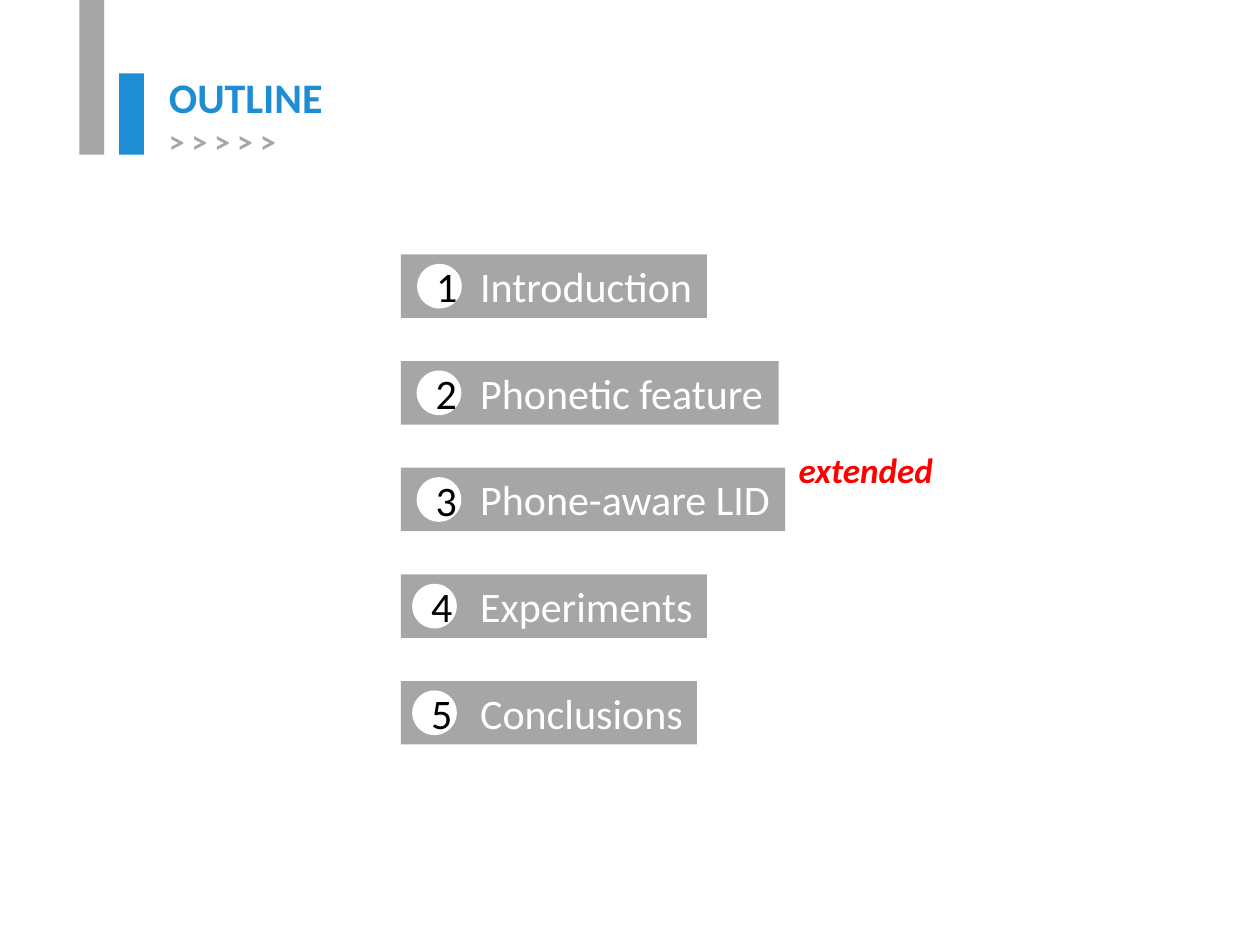
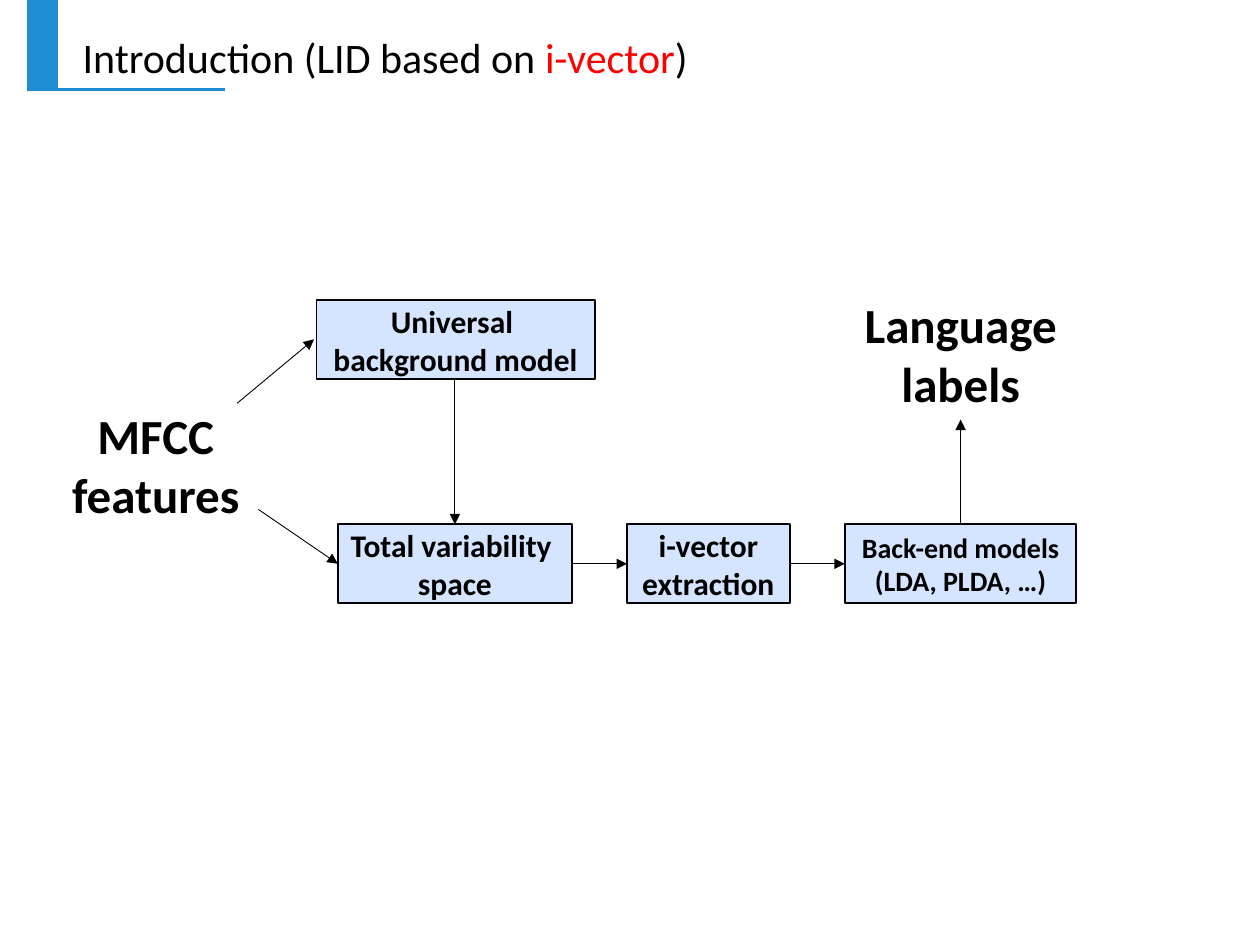
from pptx import Presentation
from pptx.dml.color import RGBColor
from pptx.enum import shapes, text
from pptx.oxml import ns, xmlchemy
from pptx.util import Cm, Pt

BLUE = RGBColor(0x1E, 0x8D, 0xD4)
GRAY = RGBColor(0xA6, 0xA6, 0xA6)
PALE = RGBColor(0xD5, 0xE5, 0xFF)
RED = RGBColor(0xFF, 0, 0)
BLACK = RGBColor(0, 0, 0)
WHITE = RGBColor(0xFF, 0xFF, 0xFF)
FONT = "Calibri"
RECT = shapes.MSO_SHAPE.RECTANGLE
OVAL = shapes.MSO_SHAPE.OVAL
LEFT, MID = text.PP_ALIGN.LEFT, text.PP_ALIGN.CENTER
TOP, CENTER = text.MSO_ANCHOR.TOP, text.MSO_ANCHOR.MIDDLE


def style(part, size, color, bold=False, italic=False):
    for run in part.runs:
        font = run.font
        font.name, font.size = FONT, Pt(size)
        font.bold, font.italic = bold, italic
        font.color.rgb = color


def write(shape, words, size, color, align=LEFT, anchor=TOP, wrap=True, **look):
    frame = shape.text_frame
    frame.text = words
    frame.word_wrap = wrap
    frame.auto_size = text.MSO_AUTO_SIZE.NONE
    frame.vertical_anchor = anchor
    for part in frame.paragraphs:
        part.alignment = align
        style(part, size, color, **look)
    return frame


def block(slide, box, fill, kind=RECT, line=None, width=1):
    shape = slide.shapes.add_shape(kind, *map(Cm, box))
    shape.shadow.inherit = False
    shape.fill.solid()
    shape.fill.fore_color.rgb = fill
    if line is None:
        shape.line.fill.background()
    else:
        shape.line.color.rgb = line
        shape.line.width = Pt(width)
    return shape


def label(slide, box, words, size, color, **look):
    shape = slide.shapes.add_textbox(*map(Cm, box))
    write(shape, words, size, color, wrap=False, **look)


def link(slide, start, end, color=BLACK, width=0.5, arrow=True):
    line = slide.shapes.add_connector(
        shapes.MSO_CONNECTOR.STRAIGHT, *map(Cm, start + end))
    line.line.color.rgb = color
    line.line.width = Pt(width)
    if arrow:
        tip = xmlchemy.OxmlElement("a:tailEnd")
        tip.set("type", "triangle")
        line.line._get_or_add_ln().append(tip)
    props = line._element.find(ns.qn("p:spPr"))
    props.append(xmlchemy.OxmlElement("a:effectLst"))


def place(slide, box):
    title = slide.shapes.title
    title.left, title.top, title.width, title.height = map(Cm, box)
    return title


def cover(slide, x, y):
    title = place(slide, (x + 1.55, y + 1.32, 5.33, 2.06))
    frame = write(title, "OUTLINE\n> > > > >", 24, BLUE, bold=True)
    style(frame.paragraphs[1], 18, GRAY, bold=True)
    block(slide, (x, y, 0.5, 3.12), GRAY)
    block(slide, (x + 0.8, y + 1.48, 0.5, 1.64), BLUE)


def agenda(slide, x, y):
    items = [("Introduction", 6.17, 0.33), ("Phonetic feature", 7.62, 0.32),
             ("Phone-aware LID", 7.75, 0.32), ("Experiments", 6.17, 0.23),
             ("Conclusions", 5.97, 0.23)]
    step, high, dot = 2.15, 1.28, 0.9
    for i, (words, wide, shift) in enumerate(items):
        top = y + i * step
        bar = block(slide, (x, top, wide, high), GRAY)
        frame = write(bar, words, 24, WHITE, wrap=False)
        frame.margin_left = Cm(1.6)
        disc = block(slide, (x + shift, top + (high - dot) / 2, dot, dot),
                     WHITE, OVAL)
        write(disc, str(i + 1), 24, BLACK, align=MID, anchor=CENTER)
    label(slide, (x + 7.77, y + 3.79, 3.25, 1.12), "extended", 20, RED,
          bold=True, italic=True)


def header(slide, x, y):
    link(slide, (x + 3.99, y + 1.8), (x, y + 1.8), BLUE, 1.5, False)
    block(slide, (x, y, 0.61, 1.8), BLUE, line=BLUE, width=0.75)
    title = place(slide, (x + 0.86, y + 0.51, 12.83, 1.27))
    frame = write(title, "Introduction (LID based on ", 24, BLACK, wrap=False)
    part = frame.paragraphs[0]
    for words in ("i-vector", ")"):
        part.add_run().text = words
    style(part, 24, BLACK)
    part.runs[1].font.color.rgb = RED


def flow(slide, x, y):
    def node(left, top, wide, words, size=18):
        shape = block(slide, (x + left, y + top, wide, high), PALE, line=BLACK)
        write(shape, words, size, BLACK, align=MID, anchor=CENTER, bold=True)

    def arrow(start, end):
        link(slide, (x + start[0], y + start[1]), (x + end[0], y + end[1]))

    high, gap, row, first = 1.59, 1.11, 4.75, 5.64
    mid = row + high / 2
    left = first
    steps = [("Total variability \nspace", 4.72, 18),
             ("i-vector\nextraction", 3.28, 18),
             ("Back-end models (LDA, PLDA, …)", 4.67, 16)]
    for i, (words, wide, size) in enumerate(steps):
        if i:
            arrow((left - gap, mid), (left, mid))
        node(left, row, wide, words, size)
        left += wide + gap
    node(5.21, 0.23, 5.61, "Universal \nbackground model")

    axis = first + steps[0][1] / 2
    last = left - gap - steps[-1][1] / 2
    arrow((axis, 0.23 + high), (axis, row))
    arrow((last, row), (last, 2.64))
    arrow((4.04, 4.45), (first, mid))
    arrow((3.61, 2.31), (5.16, 1.02))

    for words, side, top, wide in (("MFCC\nfeatures", 0, 2.24, 3.94),
                                   ("Language\nlabels", last - 2.21, 0, 4.42)):
        label(slide, (x + side, y + top, wide, 2.64), words, 28, BLACK,
              align=MID, bold=True)


def main():
    deck = Presentation()
    deck.slide_width, deck.slide_height = Cm(25.4), Cm(19.05)
    plain = deck.slide_layouts[5]

    slide = deck.slides.add_slide(plain)
    cover(slide, 1.6, 0)
    agenda(slide, 8.08, 5.13)

    slide = deck.slides.add_slide(plain)
    header(slide, 0.55, 0)
    flow(slide, 1.17, 5.82)

    deck.save("out.pptx")


if __name__ == "__main__":
    main()
